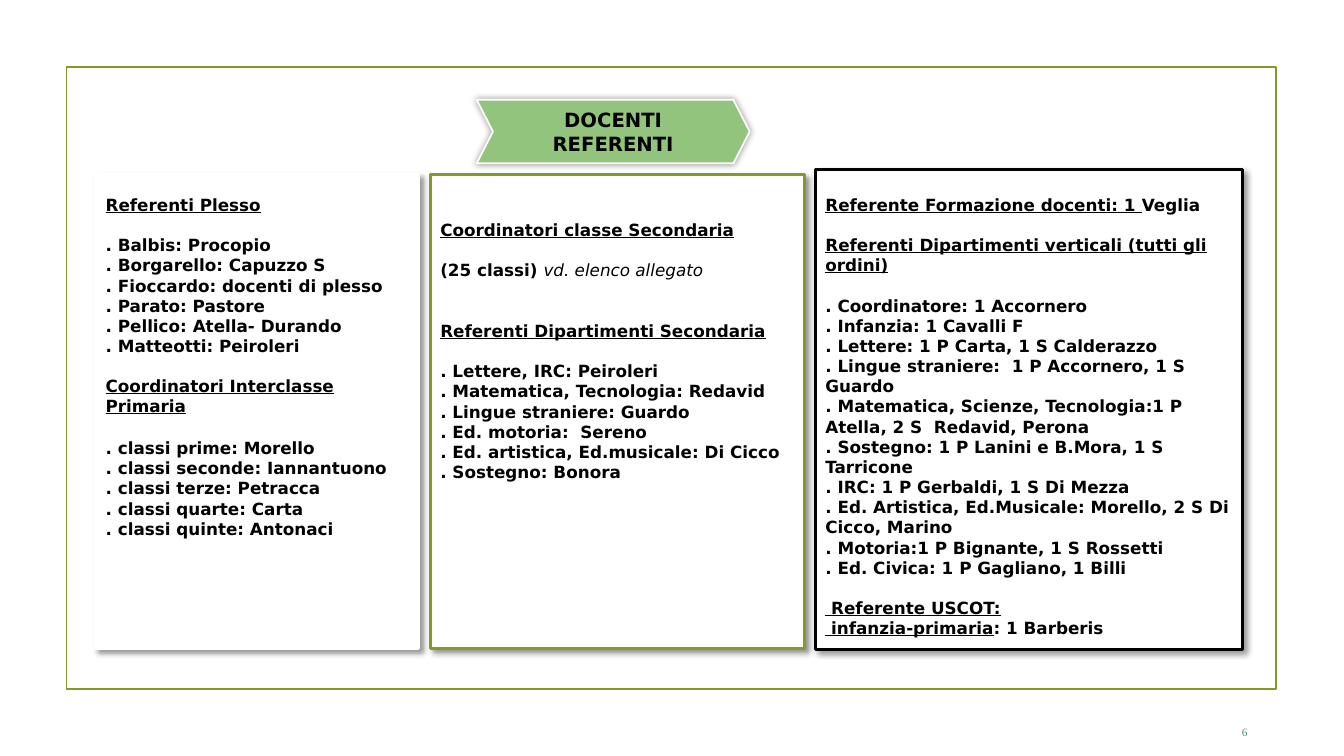
"""Build the slide on the reference teachers of the school."""
from lxml.etree import SubElement
from pptx import Presentation
from pptx.dml.color import RGBColor
from pptx.enum.shapes import MSO_SHAPE
from pptx.enum.text import MSO_ANCHOR, PP_ALIGN
from pptx.oxml.ns import qn
from pptx.util import Pt

BLACK = RGBColor(0x00, 0x00, 0x00)
WHITE = RGBColor(0xFF, 0xFF, 0xFF)
OLIVE = RGBColor(0x83, 0x99, 0x2A)
GREEN = RGBColor(0x93, 0xC4, 0x7D)
TEAL = RGBColor(0x3C, 0x97, 0x70)
LINE = 14.4
HEADING = {"bold": True, "underline": True}
ENTRY = {"bold": True}
ASIDE = {"italic": True}


def add_run(paragraph, text, size=12, font="DejaVu Sans", color=BLACK,
            bold=False, italic=False, underline=False):
    run = paragraph.add_run()
    run.text = text
    run.font.size = Pt(size)
    run.font.name = font
    run.font.color.rgb = color
    run.font.bold = bold
    run.font.italic = italic
    run.font.underline = underline


def add_box(kind, left, top, width, height, fill, border, weight, blur=4, distance=3):
    box = slide.shapes.add_shape(kind, Pt(left), Pt(top), Pt(width), Pt(height))
    box.fill.solid()
    box.fill.fore_color.rgb = fill
    box.line.color.rgb = border
    box.line.width = Pt(weight)
    box.shadow.inherit = False
    effects = box._element.spPr.find(qn("a:effectLst"))
    shadow = SubElement(effects, qn("a:outerShdw"), blurRad=str(Pt(blur)),
                        dist=str(Pt(distance)), dir="2700000", rotWithShape="0")
    tint = SubElement(shadow, qn("a:srgbClr"), val="000000")
    SubElement(tint, qn("a:alpha"), val="40000")
    box.text_frame.word_wrap = True
    return box


presentation = Presentation()
presentation.slide_width = Pt(960)
presentation.slide_height = Pt(540)
slide = presentation.slides.add_slide(presentation.slide_layouts[6])

border = slide.shapes.add_shape(MSO_SHAPE.RECTANGLE, Pt(47.5), Pt(48), Pt(864), Pt(444))
border.fill.background()
border.line.color.rgb = OLIVE
border.line.width = Pt(1.25)
border.shadow.inherit = False

page_number = slide.shapes.add_textbox(Pt(887), Pt(518.4), Pt(34), Pt(16)).text_frame
page_number.margin_left = page_number.margin_top = 0
page_number.margin_right = page_number.margin_bottom = 0
page_number.word_wrap = True
add_run(page_number.paragraphs[0], "6", size=8, font="Times New Roman", color=TEAL)

title = add_box(MSO_SHAPE.CHEVRON, 340.5, 71.3, 195, 45.4, GREEN, WHITE, 1.25, blur=5, distance=0)
title.adjustments[0] = 0.256
title.text_frame.vertical_anchor = MSO_ANCHOR.MIDDLE
title.text_frame.paragraphs[0].alignment = PP_ALIGN.CENTER
add_run(title.text_frame.paragraphs[0], "DOCENTI REFERENTI", size=14, bold=True)

# Each section: space before, style, style after the bar, lines
primary = [
    (0, HEADING, ENTRY, ["Referenti Plesso"]),
    (LINE, ENTRY, ENTRY, [
        ". Balbis: Procopio",
        ". Borgarello: Capuzzo S",
        ". Fioccardo: docenti di plesso",
        ". Parato: Pastore",
        ". Pellico: Atella- Durando",
        ". Matteotti: Peiroleri",
    ]),
    (LINE, HEADING, ENTRY, ["Coordinatori Interclasse Primaria"]),
    (LINE + 1, ENTRY, ENTRY, [
        ". classi prime: Morello",
        ". classi seconde: Iannantuono",
        ". classi terze: Petracca",
        ". classi quarte: Carta",
        ". classi quinte: Antonaci",
    ]),
]
secondary = [
    (0, HEADING, ENTRY, ["Coordinatori classe Secondaria"]),
    (LINE, ENTRY, ASIDE, ["(25 classi) |vd. elenco allegato"]),
    (2 * LINE, HEADING, ENTRY, ["Referenti Dipartimenti Secondaria"]),
    (LINE, ENTRY, ENTRY, [
        ". Lettere, IRC: Peiroleri",
        ". Matematica, Tecnologia: Redavid",
        ". Lingue straniere: Guardo",
        ". Ed. motoria:  Sereno",
        ". Ed. artistica, Ed.musicale: Di Cicco",
        ". Sostegno: Bonora",
    ]),
]
all_levels = [
    (0, HEADING, ENTRY, ["Referente Formazione docenti: 1 |Veglia"]),
    (LINE, HEADING, ENTRY, ["Referenti Dipartimenti verticali (tutti gli ordini)"]),
    (LINE, ENTRY, ENTRY, [
        ". Coordinatore: 1 Accornero",
        ". Infanzia: 1 Cavalli F",
        ". Lettere: 1 P Carta, 1 S Calderazzo",
        ". Lingue straniere:  1 P Accornero, 1 S  Guardo",
        ". Matematica, Scienze, Tecnologia:1 P Atella, 2 S  Redavid, Perona",
        ". Sostegno: 1 P Lanini e B.Mora, 1 S Tarricone",
        ". IRC: 1 P Gerbaldi, 1 S Di Mezza",
        ". Ed. Artistica, Ed.Musicale: Morello, 2 S Di Cicco, Marino",
        ". Motoria:1 P Bignante, 1 S Rossetti",
        ". Ed. Civica: 1 P Gagliano, 1 Billi",
    ]),
    (LINE, HEADING, ENTRY, [" Referente USCOT:", " infanzia-primaria|: 1 Barberis"]),
]
panels = [
    (68.4, 124.6, 230.4, 338.4, WHITE, 139, primary),
    (307.4, 124.6, 267.1, 338.4, OLIVE, 157, secondary),
    (582.5, 121, 305.3, 342.7, BLACK, 139, all_levels),
]

for left, top, width, height, outline, text_top, sections in panels:
    panel = add_box(MSO_SHAPE.RECTANGLE, left, top, width, height, WHITE, outline, 2)
    frame = panel.text_frame
    frame.vertical_anchor = MSO_ANCHOR.TOP
    frame.margin_top = Pt(text_top - top)
    paragraph = frame.paragraphs[0]
    for gap, style, tail_style, lines in sections:
        for number, line in enumerate(lines):
            if paragraph.runs:
                paragraph = frame.add_paragraph()
            paragraph.alignment = PP_ALIGN.LEFT
            paragraph.line_spacing = Pt(LINE)
            paragraph.space_before = Pt(gap if number == 0 else 0)
            for part, part_style in zip(line.split("|"), (style, tail_style)):
                add_run(paragraph, part, **part_style)

presentation.save("out.pptx")
